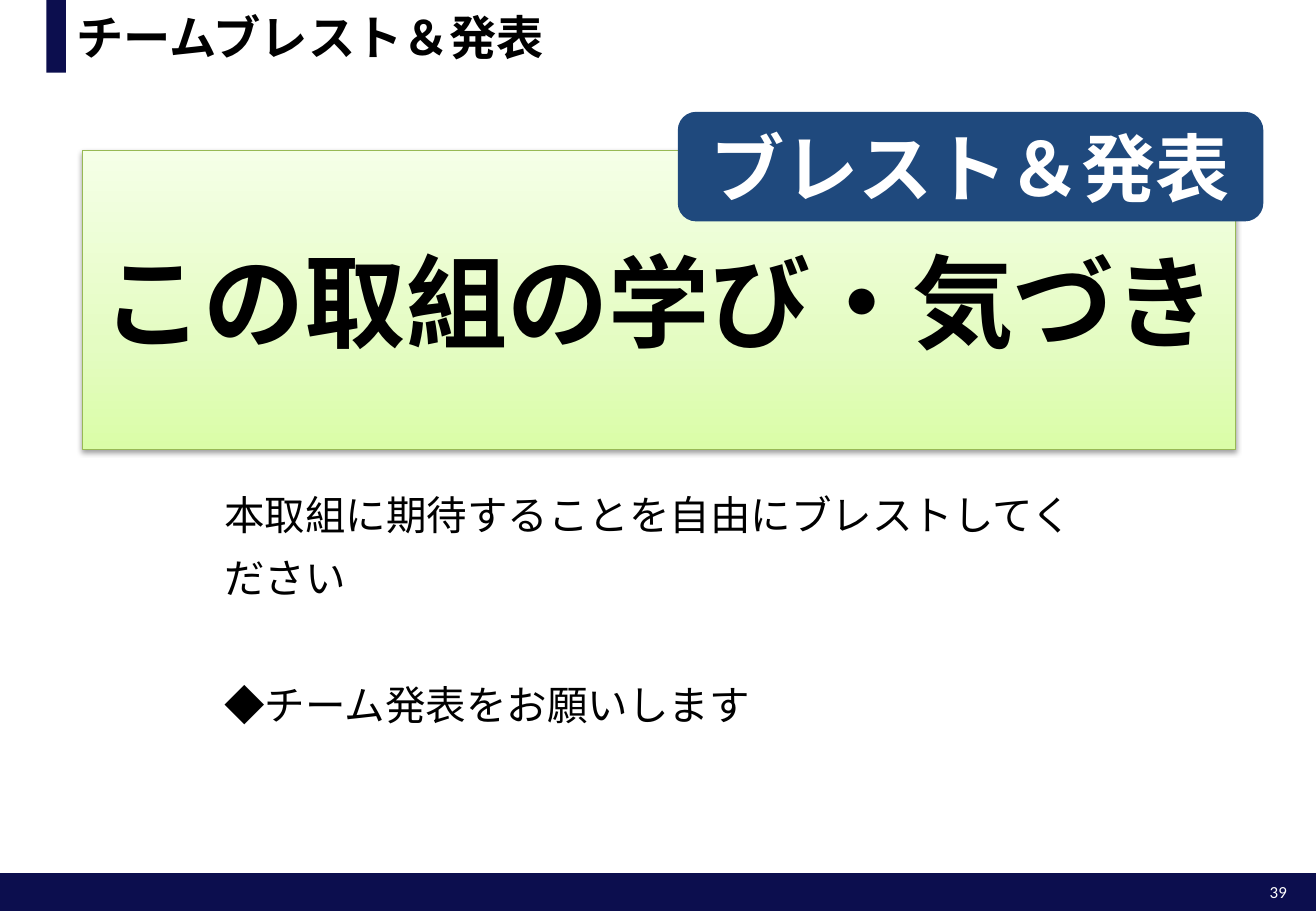
import copy
from dataclasses import dataclass
from typing import Optional

import lxml.etree
import pptx
import pptx.dml.color
import pptx.enum.shapes
import pptx.enum.text
import pptx.oxml.ns
import pptx.util

Cm = pptx.util.Cm
Pt = pptx.util.Pt
Align = pptx.enum.text.PP_ALIGN
Anchor = pptx.enum.text.MSO_ANCHOR
Kind = pptx.enum.shapes.MSO_SHAPE
qn = pptx.oxml.ns.qn


@dataclass(frozen=True)
class Theme:
    navy: str = "0C0E4E"
    blue: str = "1F497D"
    black: str = "000000"
    white: str = "FFFFFF"
    green_line: str = "98B955"
    green_stops: tuple = ((0, "DAFDA7"), (0.35, "E4FCC2"), (1, "F5FFE7"))
    japanese: str = "Noto Sans CJK JP"
    title_font: str = "Arial"
    number_font: str = "Calibri"
    number_size: float = 10
    body_size: float = 24
    title_size: float = 28
    badge_size: float = 44
    topic_size: float = 60


THEME = Theme()


@dataclass(frozen=True)
class Frame:
    left: float
    top: float
    width: float
    height: float

    def lengths(self) -> tuple:
        return Cm(self.left), Cm(self.top), Cm(self.width), Cm(self.height)


@dataclass(frozen=True)
class Wording:
    lines: tuple
    size: float
    color: str = THEME.black
    font: str = THEME.japanese
    bold: bool = False
    align: Align = Align.LEFT
    anchor: Anchor = Anchor.MIDDLE
    wrap: bool = True
    line_spacing: float = 1.0
    gap: float = 0
    inset: tuple = (0.25, 0.13)


@dataclass(frozen=True)
class Panel:
    frame: Frame
    kind: Kind = Kind.RECTANGLE
    fill: Optional[str] = THEME.navy
    wording: Optional[Wording] = None


def rgb(code: str) -> pptx.dml.color.RGBColor:
    return pptx.dml.color.RGBColor.from_string(code)


def write(shape, wording: Wording) -> None:
    frame = shape.text_frame
    frame.word_wrap = wording.wrap
    frame.vertical_anchor = wording.anchor
    frame.margin_left = frame.margin_right = Cm(wording.inset[0])
    frame.margin_top = frame.margin_bottom = Cm(wording.inset[1])
    for index, line in enumerate(wording.lines):
        para = frame.add_paragraph() if index else frame.paragraphs[0]
        para.text = line
        para.alignment = wording.align
        para.line_spacing = wording.line_spacing
        para.space_before = Pt(wording.gap if index else 0)
        para.font.size = Pt(wording.size)
        para.font.bold = wording.bold
        para.font.color.rgb = rgb(wording.color)
        para.font.name = wording.font
        # Japanese glyphs take the East Asian typeface
        latin = para._p.pPr.find(qn("a:defRPr")).find(qn("a:latin"))
        east_asian = lxml.etree.Element(qn("a:ea"), typeface=THEME.japanese)
        latin.addnext(east_asian)


def draw_panel(page, panel: Panel):
    shape = page.shapes.add_shape(panel.kind, *panel.frame.lengths())
    shape.shadow.inherit = False
    shape.line.fill.background()
    if panel.fill:
        shape.fill.solid()
        shape.fill.fore_color.rgb = rgb(panel.fill)
    if panel.wording:
        write(shape, panel.wording)
    return shape


def draw_text(page, frame: Frame, wording: Wording) -> None:
    write(page.shapes.add_textbox(*frame.lengths()), wording)


def shade_topic(shape) -> None:
    """Green gradient, thin outline and soft shadow below."""
    shape.fill.gradient()
    shape.fill.gradient_angle = 90
    properties = shape._element.spPr
    stops = properties.find(qn("a:gradFill")).find(qn("a:gsLst"))
    stops.append(copy.deepcopy(stops[0]))
    for stop, (position, color) in zip(shape.fill.gradient_stops, THEME.green_stops):
        stop.position = position
        stop.color.rgb = rgb(color)
    shape.line.color.rgb = rgb(THEME.green_line)
    shape.line.width = Pt(0.75)
    shadow = lxml.etree.SubElement(
        properties.find(qn("a:effectLst")), qn("a:outerShdw"),
        blurRad=str(Pt(3.1)), dist=str(Pt(1.6)), dir="5400000", rotWithShape="0")
    color = lxml.etree.SubElement(shadow, qn("a:srgbClr"), val=THEME.black)
    lxml.etree.SubElement(color, qn("a:alpha"), val="38000")


FOOTER = Panel(Frame(0, 18.26, 27.51, 0.79))
TITLE_MARK = Panel(Frame(0.97, 0, 0.41, 1.52))
TOPIC = Panel(
    Frame(1.73, 3.15, 24.1, 6.25), fill=None,
    wording=Wording(("この取組の学び・気づき",), THEME.topic_size, bold=True,
                    align=Align.CENTER))
BADGE = Panel(
    Frame(14.17, 2.34, 12.24, 2.29), Kind.ROUNDED_RECTANGLE, THEME.blue,
    Wording(("ブレスト＆発表",), THEME.badge_size, THEME.white, bold=True,
            align=Align.CENTER))
PAGE_NUMBER = Wording(("39",), THEME.number_size, THEME.white, THEME.number_font,
                      align=Align.RIGHT, anchor=Anchor.TOP, wrap=False)
TITLE = Wording(("チームブレスト＆発表",), THEME.title_size, font=THEME.title_font,
                bold=True)
BODY = Wording(("本取組に期待することを自由にブレストしてください",
                "◆チーム発表をお願いします"),
               THEME.body_size, anchor=Anchor.TOP, line_spacing=1.3, gap=37.5,
               inset=(0.3, 0.2))


def main() -> None:
    deck = pptx.Presentation()
    deck.slide_width, deck.slide_height = Cm(27.51), Cm(19.05)
    page = deck.slides.add_slide(deck.slide_layouts[6])

    # Footer bar, page number and title
    draw_panel(page, FOOTER)
    draw_panel(page, TITLE_MARK)
    draw_text(page, Frame(26.11, 18.31, 1.04, 0.69), PAGE_NUMBER)
    draw_text(page, Frame(1.35, 0, 25.81, 1.52), TITLE)

    # Topic, instructions and the badge over the topic's corner
    shade_topic(draw_panel(page, TOPIC))
    draw_text(page, Frame(4.39, 9.75, 18.72, 4.34), BODY)
    draw_panel(page, BADGE)

    deck.save("out.pptx")


if __name__ == "__main__":
    main()
